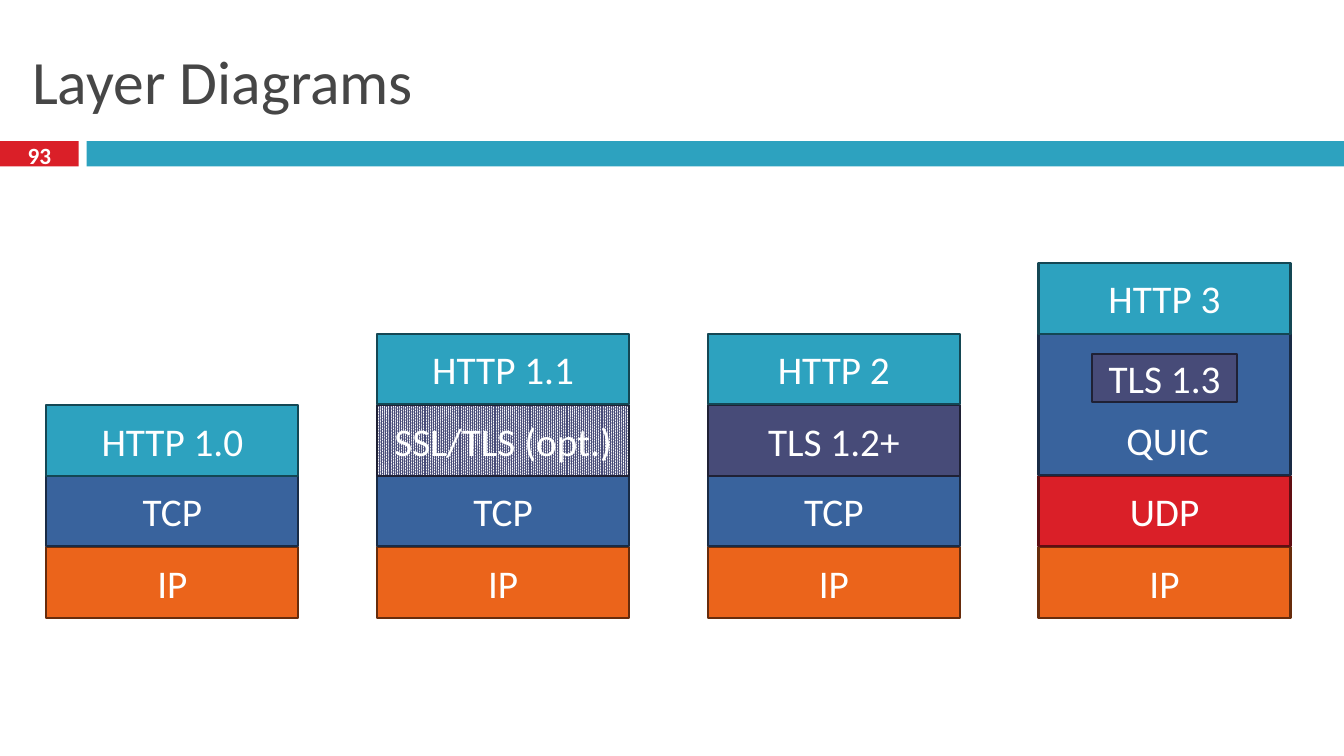
from pptx import Presentation, util as u
from pptx.dml.color import RGBColor
from pptx.enum import dml, shapes, text

PX = 9144  # EMU in one px, 100 px to the inch
FONT = "Calibri"
WHITE = "FFFFFF"

# Fill and outline of each family of layers
TEAL = ("2DA2BF", "144754")
BLUE = ("39639D", "192B45")
ORANGE = ("EB641B", "672C0C")
RED = ("DA1F28", "600E12")
PURPLE = ("474B78", "1F2135")

# Stack geometry
LEFT, PITCH, WIDTH = 46, 328, 250
BASE, LAYER = 613, 70
LEVEL_GAP = 352 / 5

# Layers from the bottom up: label, colours, rows taken
IP = ("IP", ORANGE, 1)
TCP = ("TCP", BLUE, 1)
STACKS = [
    [IP, TCP, ("HTTP 1.0", TEAL, 1)],
    [IP, TCP, ("SSL/TLS (opt.)", PURPLE, 1), ("HTTP 1.1", TEAL, 1)],
    [IP, TCP, ("TLS 1.2+", PURPLE, 1), ("HTTP 2", TEAL, 1)],
    [IP, ("UDP", RED, 1), ("", BLUE, 2), ("HTTP 3", TEAL, 1)],
]


def colour(value):
    return RGBColor.from_string(value)


def area(*lengths):
    return [u.Emu(length * PX) for length in lengths]


def write(shape, words, size, ink=WHITE, align=text.PP_ALIGN.CENTER,
          anchor=text.MSO_ANCHOR.MIDDLE, bold=False):
    frame = shape.text_frame
    frame.word_wrap = True
    frame.vertical_anchor = anchor
    para = frame.paragraphs[0]
    para.text = words
    para.alignment = align
    para.font.name = FONT
    para.font.size = u.Pt(size)
    para.font.bold = bold
    para.font.color.rgb = colour(ink)


def add_box(parent, place, fill, line=None, words=""):
    box = parent.shapes.add_shape(shapes.MSO_SHAPE.RECTANGLE, *area(*place))
    box.shadow.inherit = False
    box.fill.solid()
    box.fill.fore_color.rgb = colour(fill)
    if line:
        box.line.color.rgb = colour(line)
        box.line.width = u.Pt(1.5)
    else:
        box.line.fill.background()
    if words:
        write(box, words, 28)
    return box


def add_label(parent, place, words, size, **style):
    label = parent.shapes.add_textbox(*area(*place))
    write(label, words, size, **style)


def add_stack(page, left, layers):
    group = page.shapes.add_group_shape()
    boxes = []
    level = 0
    for words, (fill, line), rows in layers:
        level += rows
        top = round(BASE - level * LEVEL_GAP)
        place = (left, top, WIDTH, rows * LAYER)
        boxes.append(add_box(group, place, fill, line, words))
    return group, boxes


def dot_fill(box, ink):
    box.fill.patterned()
    box.fill.pattern = dml.MSO_PATTERN.PERCENT_90
    box.fill.fore_color.rgb = colour(ink)
    box.fill.back_color.rgb = colour(WHITE)


def main():
    deck = Presentation()
    deck.slide_width, deck.slide_height = area(1333, 750)
    page = deck.slides.add_slide(deck.slide_layouts[6])

    # Header band, title and page number
    add_box(page, (0, 140, 78, 25), RED[0])
    add_box(page, (86, 140, 1247, 25), TEAL[0])
    add_label(page, (22, 25, 1289, 108), "Layer Diagrams", 44,
              ink="464646", align=text.PP_ALIGN.LEFT)
    add_label(page, (0, 137, 78, 33), "93", 16.6, bold=True)

    # Protocol stacks
    stacks = [add_stack(page, LEFT + column * PITCH, layers)
              for column, layers in enumerate(STACKS)]

    # Optional encryption layer of HTTP 1.1
    dot_fill(stacks[1][1][2], PURPLE[0])

    # QUIC with TLS inside it
    quic_group = stacks[3][0]
    add_box(quic_group, (1083, 351, 144, 48), *PURPLE, "TLS 1.3")
    add_label(quic_group, (1097, 408, 122, 57), "QUIC", 28,
              anchor=text.MSO_ANCHOR.TOP)

    deck.save("out.pptx")


if __name__ == "__main__":
    main()
